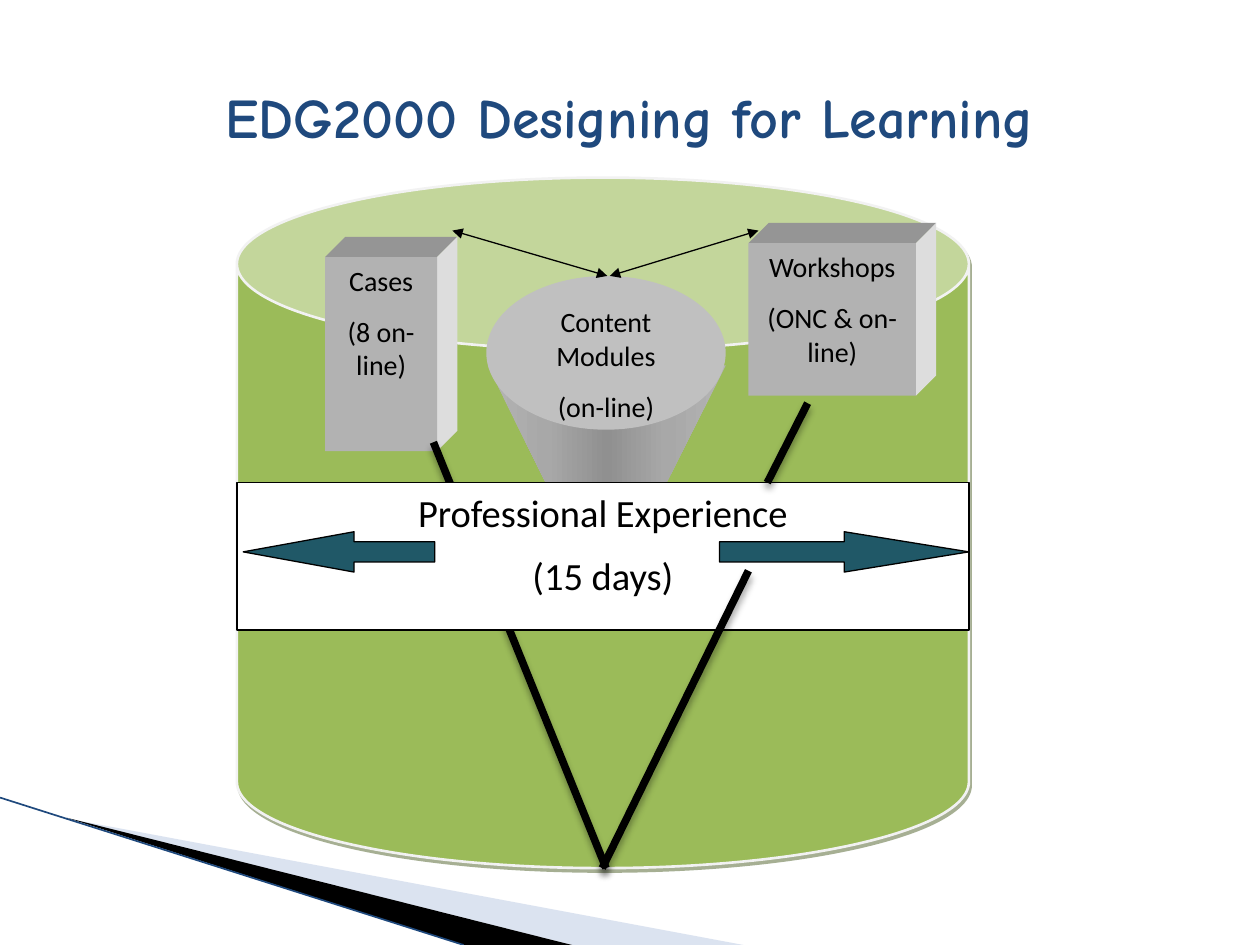
from pptx import Presentation
from pptx.dml.color import RGBColor
from pptx.enum.shapes import MSO_CONNECTOR, MSO_SHAPE
from pptx.enum.text import MSO_ANCHOR, PP_ALIGN
from pptx.oxml import parse_xml
from pptx.oxml.ns import nsdecls
from pptx.util import Inches, Pt

# Content
TITLE = "EDG2000 Designing for Learning"
BOXES = [  # lines, left, top, width, height of the front face
    (["Cases", "(8 on-line)"], 2.58, 2.04, 0.89, 1.54),
    (["Workshops", "(ONC & on-line)"], 5.94, 1.93, 1.33, 1.21),
]
MODULES = ["Content Modules", "(on-line)"]
BAND = ["Professional Experience", "(15 days)"]
ARROWS = [  # shape, left, width, head length in heights
    (MSO_SHAPE.LEFT_ARROW, 1.93, 1.52, 2.75),
    (MSO_SHAPE.RIGHT_ARROW, 5.71, 1.98, 3.09),
]
LINKS = [(6.02, 1.83, 4.84, 2.19), (3.59, 1.83, 4.82, 2.19)]
BACK = [(3.44, 3.51, 4.81, 6.89)]
FRONT = [(6.41, 3.2, 6.09, 3.83), (5.94, 4.53, 4.78, 6.89)]
DEPTH = 0.16
BAR = "000000", 35, 4, 3, 90  # shadow: colour, opacity, blur, distance, angle

deck = Presentation()
deck.slide_width, deck.slide_height = Inches(10), Inches(7.5)
slide = deck.slides.add_slide(deck.slide_layouts[5])
shapes = slide.shapes


def rgb(code):
    return RGBColor.from_string(code)


def effect(shape, shade=None):
    body = ""
    if shade:
        tint, alpha, blur, dist, angle = shade
        body = (f'<a:outerShdw blurRad="{Pt(blur)}" dist="{Pt(dist)}" '
                f'dir="{angle * 60000}" rotWithShape="0"><a:srgbClr val="{tint}">'
                f'<a:alpha val="{alpha * 1000}"/></a:srgbClr></a:outerShdw>')
    shape._element.spPr.append(
        parse_xml(f'<a:effectLst {nsdecls("a")}>{body}</a:effectLst>'))


def paint(shape, fill, line=None, weight=0.75, shade=None):
    shape.fill.solid()
    shape.fill.fore_color.rgb = rgb(fill)
    if line:
        shape.line.color.rgb = rgb(line)
        shape.line.width = Pt(weight)
    else:
        shape.line.fill.background()
    if shade:
        effect(shape, shade)
    else:
        shape.shadow.inherit = False
    return shape


def add(kind, left, top, width, height, fill, **look):
    shape = shapes.add_shape(kind, *map(Inches, (left, top, width, height)))
    return paint(shape, fill, **look)


def outline(points, fill):
    start, *rest = [(Inches(x), Inches(y)) for x, y in points]
    path = shapes.build_freeform(*start)
    path.add_line_segments(rest, close=True)
    return paint(path.convert_to_shape(), fill)


def write(shape, lines, size=16, font="Calibri", color="000000", bold=False,
          after=10, anchor=MSO_ANCHOR.TOP):
    frame = shape.text_frame
    frame.word_wrap = True
    frame.vertical_anchor = anchor
    for i, line in enumerate(lines):
        para = frame.add_paragraph() if i else frame.paragraphs[0]
        para.text = line
        para.alignment = PP_ALIGN.CENTER
        para.space_before, para.space_after = Pt(0), Pt(after)
        face = para.font
        face.size, face.name, face.bold = Pt(size), font, bold
        face.color.rgb = rgb(color)


def connect(ends, color="000000", weight=0.75, heads=False, shade=None):
    line = shapes.add_connector(MSO_CONNECTOR.STRAIGHT, *map(Inches, ends))
    line.line.color.rgb = rgb(color)
    line.line.width = Pt(weight)
    if heads:
        stroke = line._element.spPr.find("{*}ln")
        for end in ("headEnd", "tailEnd"):
            stroke.append(
                parse_xml(f'<a:{end} {nsdecls("a")} type="triangle"/>'))
    effect(line, shade)


# Corner decoration
wedge = outline([(0.55, 6.5), (5.9, 7.5), (4.54, 7.5)], "A7B9DB")
tint = wedge._element.spPr.find(".//{*}srgbClr")
tint.append(parse_xml(f'<a:alpha {nsdecls("a")} val="40000"/>'))
outline([(0.53, 6.49), (4.54, 7.5), (3.68, 7.5)], "000000")
connect((0, 6.33, 3.68, 7.5), "1F497D", 0.95)

# Title
title = shapes.title
title.left, title.top, title.width, title.height = map(
    Inches, (0.5, 0.3, 9, 1.25))
write(title, [TITLE], size=32, font="Comic Neue", color="1F497D", bold=True,
      after=0, anchor=MSO_ANCHOR.MIDDLE)

# Drum
drum = add(MSO_SHAPE.CAN, 1.88, 1.41, 5.81, 5.48, "9BBB59", line="F2F2F2",
           weight=1.5, shade=("4E6128", 50, 0, 2.2, 63))
drum.adjustments[0] = 0.25

# Cone: shaded side, then the lid
cone = outline([(3.87, 2.9), (5.76, 2.9), (5.28, 3.85), (4.34, 3.85)], "A8A8A8")
stops = [(0, "B4B4B4"), (25, "A8A8A8"), (50, "909090"), (75, "A8A8A8"),
         (100, "B4B4B4")]
marks = "".join(f'<a:gs pos="{at * 1000}"><a:srgbClr val="{c}"/></a:gs>'
                for at, c in stops)
solid = cone._element.spPr.find("{*}solidFill")
solid.addprevious(parse_xml(
    f'<a:gradFill {nsdecls("a")}><a:gsLst>{marks}</a:gsLst>'
    '<a:lin ang="0" scaled="0"/></a:gradFill>'))
cone._element.spPr.remove(solid)
lid = add(MSO_SHAPE.OVAL, 3.86, 2.19, 1.9, 1.22, "C0C0C0")
write(lid, MODULES)

# Boxes with a top and a side face
for lines, x, y, w, h in BOXES:
    right, low = x + w, y + h
    outline([(x, y), (x + DEPTH, y - DEPTH), (right + DEPTH, y - DEPTH),
             (right, y)], "959595")
    outline([(right, y), (right + DEPTH, y - DEPTH),
             (right + DEPTH, low - DEPTH), (right, low)], "DDDDDD")
    write(add(MSO_SHAPE.RECTANGLE, x, y, w, h, "B2B2B2"), lines)

# Band across the drum, with the bars behind and in front of it
for ends in BACK:
    connect(ends, weight=4.33, shade=BAR)
band = add(MSO_SHAPE.RECTANGLE, 1.88, 3.83, 5.81, 1.17, "FFFFFF", line="000000")
write(band, BAND, size=22)
for kind, left, width, head in ARROWS:
    arrow = add(kind, left, 4.22, width, 0.32, "205867", line="000000")
    arrow.adjustments[0], arrow.adjustments[1] = 0.5, head
for ends in LINKS:
    connect(ends, heads=True)
for ends in FRONT:
    connect(ends, weight=4.33, shade=BAR)

deck.save("out.pptx")
